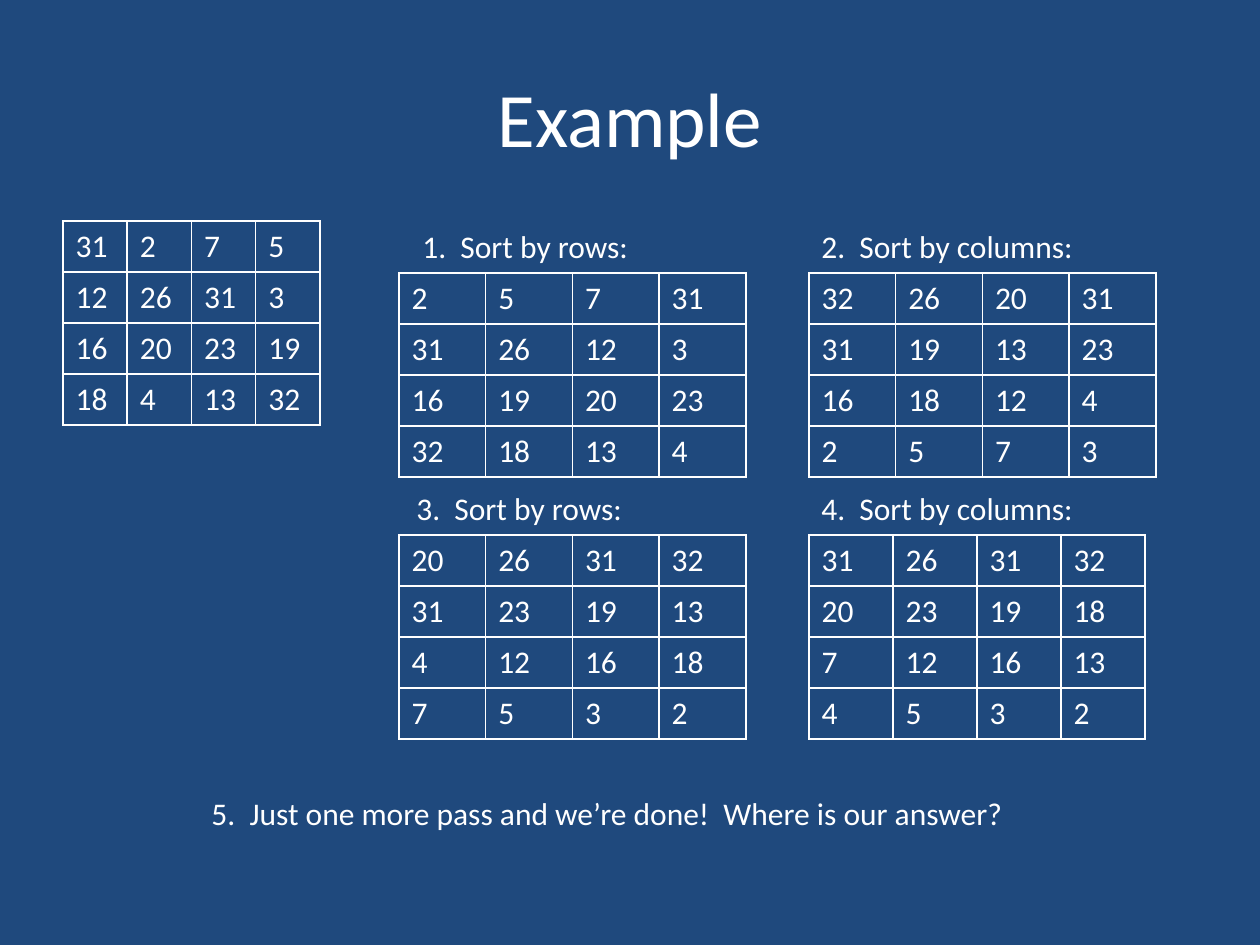
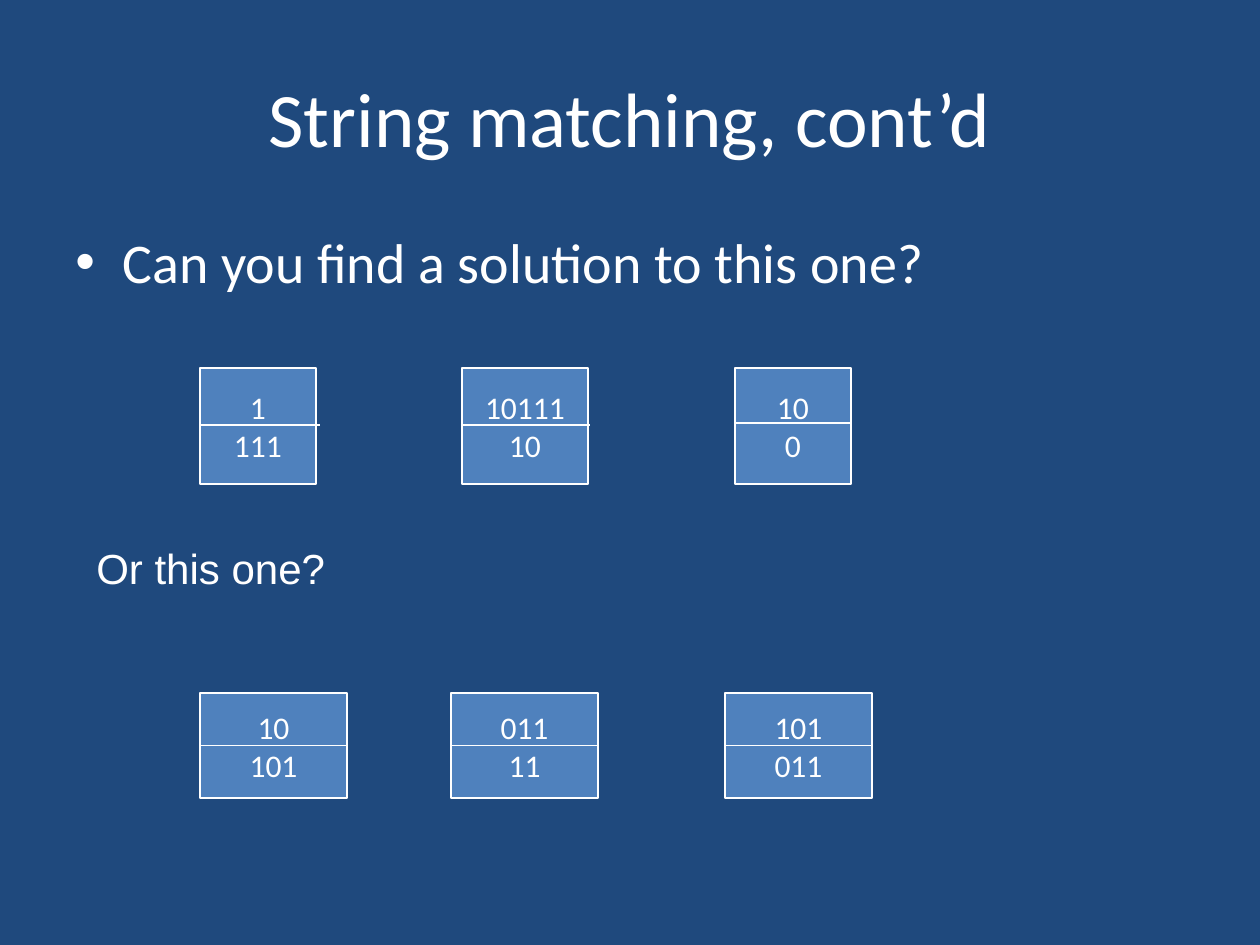
from dataclasses import dataclass

from lxml import etree
from pptx import Presentation
from pptx import util as u
from pptx.dml.color import RGBColor
from pptx.enum import shapes, text
from pptx.oxml.ns import qn


@dataclass(frozen=True)
class Theme:
    back: RGBColor = RGBColor(0x1F, 0x49, 0x7D)
    tile: RGBColor = RGBColor(0x4F, 0x81, 0xBD)
    ink: RGBColor = RGBColor(0xFF, 0xFF, 0xFF)
    font: str = "Calibri"
    plain_font: str = "Arial"
    title: int = 44
    body: int = 32
    prompt: int = 24
    small: int = 18
    line: float = 0.75
    border: float = 1


THEME = Theme()
SCALE = 914400 / 126
PAGE = (1260, 945)
TITLE_BOX = (63, 38, 1134, 157)
ROW_HEIGHT = 51
LABEL_SIZE = (315, 50)

START = ((63, 221, 257), "31 2 7 5/12 26 31 3/16 20 23 19/18 4 13 32")
PASSES = [
    ("1.  Sort by rows:", (410, 221), (399, 273, 347), "2 5 7 31/31 26 12 3/16 19 20 23/32 18 13 4"),
    ("2.  Sort by columns:", (809, 221), (809, 273, 347), "32 26 20 31/31 19 13 23/16 18 12 4/2 5 7 3"),
    ("3.  Sort by rows:", (404, 483), (399, 535, 347), "20 26 31 32/31 23 19 13/4 12 16 18/7 5 3 2"),
    ("4.  Sort by columns:", (809, 483), (809, 535, 336), "31 26 31 32/20 23 19 18/7 12 16 13/4 5 3 2"),
]
FIRST_PUZZLE = [
    ("1", "111", (200, 368, 116, 116), (200, 320, 425)),
    ("10111", "10", (462, 368, 126, 116), (461, 590, 425)),
    ("10", "0", (735, 368, 116, 116), (735, 851, 423)),
]
SECOND_PUZZLE = [
    ("10", "101", (200, 693, 147, 105)),
    ("011", "11", (451, 693, 147, 105)),
    ("101", "011", (725, 693, 147, 105)),
]


def px(value):
    return u.Emu(round(value * SCALE))


def write(frame, words, size=THEME.small, font=THEME.font, align=text.PP_ALIGN.LEFT,
          anchor=text.MSO_ANCHOR.TOP, wrap=True, bullet_indent=0):
    frame.word_wrap = wrap
    frame.vertical_anchor = anchor
    for index, line in enumerate(words.split("\n")):
        para = frame.add_paragraph() if index else frame.paragraphs[0]
        para.alignment = align
        span = para.add_run()
        span.text = line
        span.font.size = u.Pt(size)
        span.font.name = font
        span.font.color.rgb = THEME.ink
        if bullet_indent:
            props = para._p.get_or_add_pPr()
            props.set("marL", str(px(bullet_indent)))
            props.set("indent", str(-px(bullet_indent)))
            etree.SubElement(props, qn("a:buFont")).set("typeface", THEME.plain_font)
            etree.SubElement(props, qn("a:buChar")).set("char", "•")


def add_words(page, box, words, **style):
    area = page.shapes.add_textbox(*map(px, box))
    write(area.text_frame, words, **style)


def add_page(deck, title):
    page = deck.slides.add_slide(deck.slide_layouts[6])
    page.background.fill.solid()
    page.background.fill.fore_color.rgb = THEME.back
    add_words(page, TITLE_BOX, title, size=THEME.title,
              align=text.PP_ALIGN.CENTER, anchor=text.MSO_ANCHOR.MIDDLE)
    return page


def outline_cell(cell):
    props = cell._tc.get_or_add_tcPr()
    for index, side in enumerate(("lnL", "lnR", "lnT", "lnB")):
        edge = etree.Element(qn(f"a:{side}"), w=str(u.Pt(THEME.border)))
        fill = etree.SubElement(edge, qn("a:solidFill"))
        etree.SubElement(fill, qn("a:srgbClr")).set("val", str(THEME.ink))
        props.insert(index, edge)


def add_matrix(page, place, numbers):
    left, top, width = place
    rows = [row.split() for row in numbers.split("/")]
    height = ROW_HEIGHT * len(rows)
    table = page.shapes.add_table(len(rows), len(rows[0]), px(left), px(top),
                                  px(width), px(height)).table
    table.first_row = False
    table.horz_banding = False
    for row_index, row in enumerate(rows):
        for column_index, number in enumerate(row):
            cell = table.cell(row_index, column_index)
            cell.fill.background()
            outline_cell(cell)
            write(cell.text_frame, number)


def add_tile(page, box, top_word, bottom_word):
    tile = page.shapes.add_shape(shapes.MSO_SHAPE.RECTANGLE, *map(px, box))
    tile.shadow.inherit = False
    tile.fill.solid()
    tile.fill.fore_color.rgb = THEME.tile
    tile.line.color.rgb = THEME.ink
    tile.line.width = u.Pt(THEME.line)
    write(tile.text_frame, f"{top_word}\n{bottom_word}", wrap=False,
          align=text.PP_ALIGN.CENTER, anchor=text.MSO_ANCHOR.MIDDLE)
    return tile


def add_divider(page, start, end, level):
    divider = page.shapes.add_connector(shapes.MSO_CONNECTOR.STRAIGHT,
                                        px(start), px(level), px(end), px(level))
    divider.line.color.rgb = THEME.ink
    divider.line.width = u.Pt(THEME.line)
    etree.SubElement(divider._element.spPr, qn("a:effectLst"))
    return divider


def build_sorting(deck):
    page = add_page(deck, "Example")
    add_matrix(page, *START)
    for label, corner, place, numbers in PASSES:
        add_matrix(page, place, numbers)
        add_words(page, corner + LABEL_SIZE, label)
    add_words(page, (199, 788, 851, 50),
              "5.  Just one more pass and we’re done!  Where is our answer?")


def build_matching(deck):
    page = add_page(deck, "String matching, cont’d")
    add_words(page, (63, 221, 1134, 624), "Can you find a solution to this one?",
              size=THEME.body, bullet_indent=47)
    for top_word, bottom_word, box, divider in FIRST_PUZZLE:
        add_tile(page, box, top_word, bottom_word)
        add_divider(page, *divider)
    add_words(page, (84, 536, 567, 63), "Or this one?",
              size=THEME.prompt, font=THEME.plain_font)
    for top_word, bottom_word, box in SECOND_PUZZLE:
        left, top, width, height = box
        tile = add_tile(page, box, top_word, bottom_word)
        divider = add_divider(page, left, left + width, top + height / 2)
        divider.begin_connect(tile, 1)
        divider.end_connect(tile, 3)


def main():
    deck = Presentation()
    deck.slide_width, deck.slide_height = map(px, PAGE)
    build_sorting(deck)
    build_matching(deck)
    deck.save("out.pptx")


if __name__ == "__main__":
    main()
